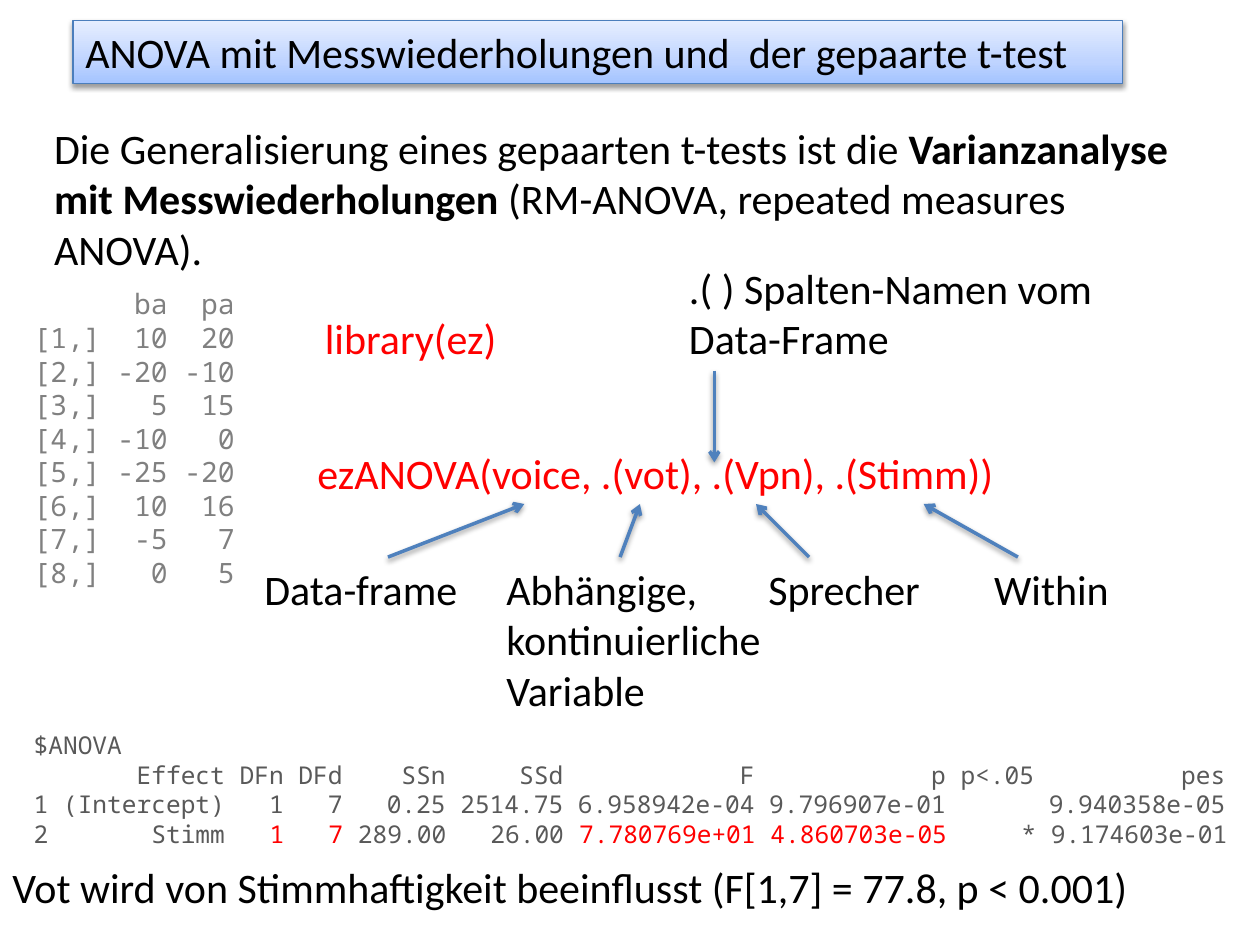
import copy

import pptx
import pptx.dml.color
import pptx.enum.dml
import pptx.enum.shapes
import pptx.enum.text
import pptx.oxml
import pptx.oxml.ns
import pptx.util

Cm = pptx.util.Cm
Pt = pptx.util.Pt

BLACK, RED, GREY, DARK_GREY = "000000", "FF0000", "808080", "595959"
BODY, MONO = "Calibri", "Noto Sans Mono"

TITLE = "ANOVA mit Messwiederholungen und  der gepaarte t-test"
TITLE_BOX = (1.47, 0.41, 21.16, 1.27)
TITLE_STOPS = [(0, "A4C4FF"), (0.35, "BFD4FF"), (1, "E6EEFF")]

# Body texts: box (left, top, width, height in cm), colour, text
LABELS = [
    ((6.3, 6.17, 4.24, 1.27), RED, "library(ez)"),
    ((6.15, 8.89, 16.31, 1.27), RED, "ezANOVA(voice, .(vot), .(Vpn), .(Stimm))"),
    ((13.64, 5.16, 10.16, 2.31), BLACK, ".( ) Spalten-Namen vom Data-Frame"),
    ((0, 17.25, 24.77, 1.27), BLACK,
     "Vot wird von Stimmhaftigkeit beeinflusst (F[1,7] = 77.8, p < 0.001)"),
]

# Explanations of the arguments, all on one row: left, width, height, text
ARGUMENTS_TOP = 11.23
ARGUMENTS = [
    (5.08, 4.45, 1.27, "Data-frame"),
    (9.96, 5.92, 3.33, "Abhängige, kontinuierliche Variable"),
    (15.24, 4.24, 1.27, "Sprecher"),
    (19.79, 2.84, 1.27, "Within"),
]
ARGUMENT_ARROWS = [(7.82, 10.57), (12.5, 12.9), (16.31, 15.24), (20.52, 18.62)]
ARROW_TIP = 10.16
COLUMN_ARROW = (14.4, 7.47, 14.4, 9.32)

INTRO_BOX = (0.84, 2.34, 23.06, 3.33)
INTRO = [
    ("Die Generalisierung eines gepaarten t-tests ist die ", False),
    ("Varianzanalyse mit Messwiederholungen ", True),
    ("(RM-ANOVA, repeated measures ANOVA).", False),
]

# Console output, in fixed columns
DATA_BOX = (0.43, 5.66, 5.72, 6.4)
DATA = [
    "      ba  pa",
    "[1,]  10  20",
    "[2,] -20 -10",
    "[3,]   5  15",
    "[4,] -10   0",
    "[5,] -25 -20",
    "[6,]  10  16",
    "[7,]  -5   7",
    "[8,]   0   5",
]
RESULT_BOX = (0.43, 14.6, 26.67, 2.64)
RESULT = [
    [("$ANOVA", DARK_GREY)],
    [("       Effect DFn DFd    SSn     SSd            F            p p<.05          pes", DARK_GREY)],
    [("1 (Intercept)   1   7   0.25 2514.75 6.958942e-04 9.796907e-01       9.940358e-05", DARK_GREY)],
    [("2       Stimm   ", DARK_GREY), ("1   7", RED), (" 289.00   26.00 ", DARK_GREY),
     ("7.780769e+01 4.860703e-05     ", RED), ("* 9.174603e-01", DARK_GREY)],
]

SHADOW = (
    f'<a:effectLst {pptx.oxml.ns.nsdecls("a")}>'
    '<a:outerShdw blurRad="40000" dist="20000" dir="5400000" rotWithShape="0">'
    '<a:srgbClr val="000000"><a:alpha val="38000"/></a:srgbClr>'
    '</a:outerShdw></a:effectLst>'
)
ARROWHEAD = f'<a:tailEnd {pptx.oxml.ns.nsdecls("a")} type="arrow"/>'


def colour(value):
    return pptx.dml.color.RGBColor.from_string(value)


def add_shadow(shape):
    shape._element.spPr.append(pptx.oxml.parse_xml(SHADOW))


def write(shape, paragraphs, font, size):
    """Fill the shape with paragraphs, each a list of (text, colour, bold)."""
    frame = shape.text_frame
    frame.word_wrap = True
    frame.vertical_anchor = pptx.enum.text.MSO_ANCHOR.TOP
    frame.text = "\n".join("" for _ in paragraphs)
    for paragraph, runs in zip(frame.paragraphs, paragraphs):
        paragraph.alignment = pptx.enum.text.PP_ALIGN.LEFT
        for text, run_colour, bold in runs:
            run = paragraph.add_run()
            run.text = text
            run.font.name = font
            run.font.size = Pt(size)
            run.font.bold = bold
            run.font.color.rgb = colour(run_colour)


def add_text(slide, box, paragraphs, font=BODY, size=24):
    shape = slide.shapes.add_textbox(*map(Cm, box))
    write(shape, paragraphs, font, size)


def add_title(slide):
    shape = slide.shapes.add_shape(
        pptx.enum.shapes.MSO_SHAPE.RECTANGLE, *map(Cm, TITLE_BOX))
    shape.fill.gradient()
    shape.fill.gradient_angle = 90
    stop_list = shape._element.spPr.find(".//" + pptx.oxml.ns.qn("a:gsLst"))
    stop_list.append(copy.deepcopy(stop_list[0]))
    for stop, (position, value) in zip(shape.fill.gradient_stops, TITLE_STOPS):
        stop.position = position
        stop.color.rgb = colour(value)
    shape.line.color.rgb = colour("4B7EBC")
    shape.line.width = Pt(0.75)
    add_shadow(shape)
    write(shape, [[(TITLE, BLACK, False)]], BODY, 24)


def add_arrow(slide, *ends):
    connector = slide.shapes.add_connector(
        pptx.enum.shapes.MSO_CONNECTOR.STRAIGHT, *map(Cm, ends))
    connector.line.color.rgb = colour("4F81BD")
    connector.line.width = Pt(2)
    connector.line._get_or_add_ln().append(pptx.oxml.parse_xml(ARROWHEAD))
    add_shadow(connector)


def main():
    presentation = pptx.Presentation()
    presentation.slide_width = Cm(25.4)
    presentation.slide_height = Cm(19.05)
    slide = presentation.slides.add_slide(presentation.slide_layouts[6])

    add_title(slide)
    add_text(slide, INTRO_BOX, [[(text, BLACK, bold) for text, bold in INTRO]])
    add_text(slide, DATA_BOX, [[(line, GREY, False)] for line in DATA], MONO, 16)
    for box, text_colour, text in LABELS:
        add_text(slide, box, [[(text, text_colour, False)]])
    result = [[(text, value, False) for text, value in line] for line in RESULT]
    add_text(slide, RESULT_BOX, result, MONO, 14)

    add_arrow(slide, *COLUMN_ARROW)
    for left, width, height, text in ARGUMENTS:
        add_text(slide, (left, ARGUMENTS_TOP, width, height), [[(text, BLACK, False)]])
    for start, end in ARGUMENT_ARROWS:
        add_arrow(slide, start, ARGUMENTS_TOP, end, ARROW_TIP)

    presentation.save("out.pptx")


if __name__ == "__main__":
    main()
